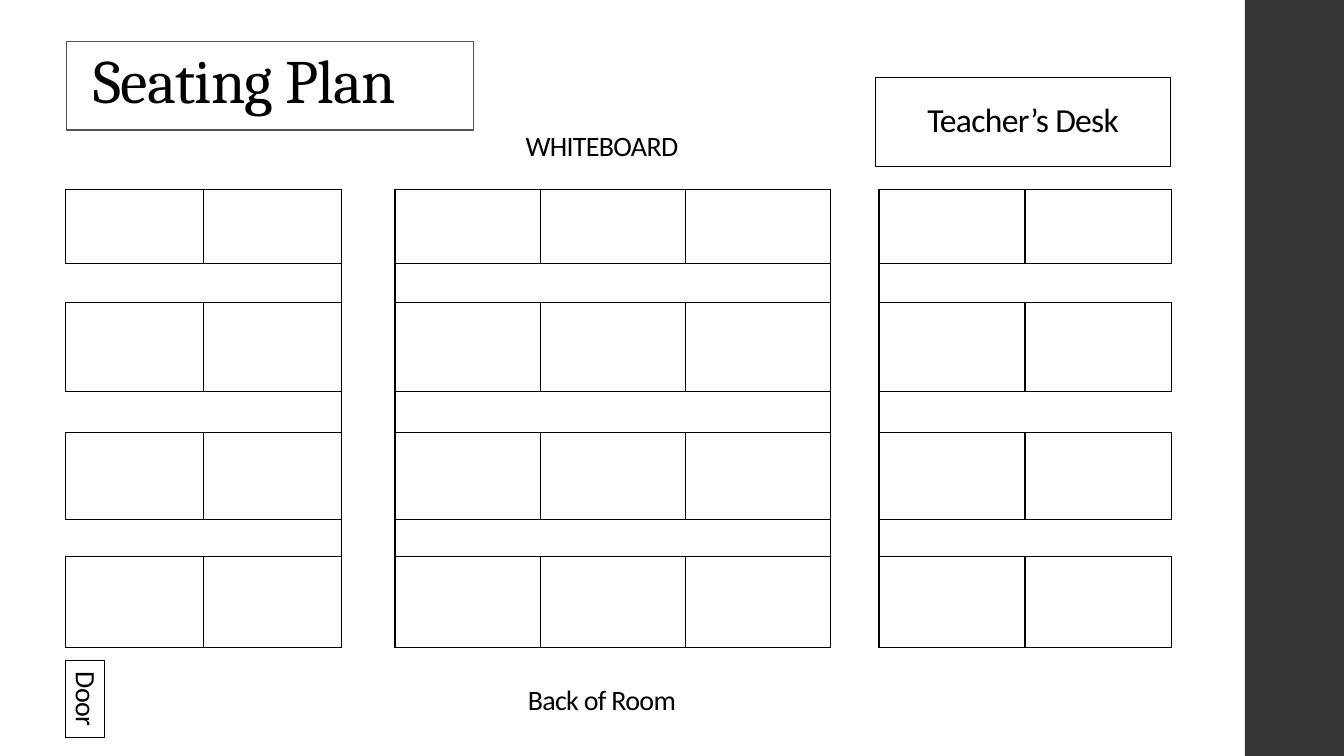
"""Build a classroom seating plan slide."""
from lxml.etree import SubElement
from pptx import Presentation
from pptx.dml.color import RGBColor
from pptx.enum.shapes import MSO_SHAPE as Shape
from pptx.enum.text import MSO_ANCHOR as Anchor, PP_ALIGN as Align
from pptx.oxml.ns import qn
from pptx.util import Pt

NO_GRID_STYLE = "{2D5ABB26-0587-4C30-8999-92F81FD0307C}"


def color(hex_code):
    return RGBColor.from_string(hex_code)


class SeatingSlide:
    ink = "000000"
    body_font = "Calibri"
    title_font = "Cambria"
    tracking = "-50"

    def __init__(self, deck):
        self.slide = deck.slides.add_slide(deck.slide_layouts[6])

    def box(self, area, fill=None, line=None, weight=0.75, rotation=0):
        panel = self.slide.shapes.add_shape(Shape.RECTANGLE, *map(Pt, area))
        panel.shadow.inherit = False
        panel.rotation = rotation
        if fill:
            panel.fill.solid()
            panel.fill.fore_color.rgb = color(fill)
        else:
            panel.fill.background()
        if line:
            panel.line.color.rgb = color(line)
            panel.line.width = Pt(weight)
        else:
            panel.line.fill.background()
        return panel

    def add_words(self, holder, words, size=20, font=None, align=Align.CENTER,
                  anchor=Anchor.BOTTOM, spacing=0.9):
        frame = holder.text_frame
        frame.word_wrap = True
        frame.vertical_anchor = anchor
        paragraph = frame.paragraphs[0]
        paragraph.alignment = align
        paragraph.line_spacing = spacing
        run = paragraph.add_run()
        run.text = words
        run.font.size = Pt(size)
        run.font.name = font or self.body_font
        run.font.color.rgb = color(self.ink)
        run.font._element.set("spc", self.tracking)

    def label(self, area, words, **style):
        holder = self.slide.shapes.add_textbox(*map(Pt, area))
        self.add_words(holder, words, **style)

    def border(self, cell, sides):
        properties = cell._tc.get_or_add_tcPr()
        for side in sides:
            edge = SubElement(properties, qn(f"a:ln{side}"), w=str(Pt(1)))
            paint = SubElement(edge, qn("a:solidFill"))
            SubElement(paint, qn("a:srgbClr"), val=self.ink)

    def seats(self, left, top, widths, heights, blocks, aisles):
        area = map(Pt, (left, top, sum(widths), sum(heights)))
        frame = self.slide.shapes.add_table(len(heights), len(widths), *area)
        plan = frame.table
        plan.first_row = plan.horz_banding = False
        plan._tbl.tblPr.find(qn("a:tableStyleId")).text = NO_GRID_STYLE
        for column, width in zip(plan.columns, widths):
            column.width = Pt(width)
        for row, height in zip(plan.rows, heights):
            row.height = Pt(height)
        for row in range(len(heights)):
            for column in range(len(widths)):
                cell = plan.cell(row, column)
                if column in aisles:
                    self.border(cell, "L")
                else:
                    self.border(cell, "TB" if row % 2 else "LRTB")
                cell.fill.background()
                cell.margin_top = cell.margin_bottom = 0
        for aisle in aisles:
            plan.cell(0, aisle).merge(plan.cell(len(heights) - 1, aisle))
        for gap in range(1, len(heights), 2):
            for first, last in blocks:
                plan.cell(gap, first).merge(plan.cell(gap, last))


def main():
    deck = Presentation()
    deck.slide_width, deck.slide_height = Pt(960), Pt(540)
    room = SeatingSlide(deck)

    room.box((889.2, 0, 70.8, 540), fill="353537")
    room.label((59.8, 23.8, 290.9, 63.4), "Seating Plan", size=44,
               font=room.title_font, align=Align.LEFT)
    room.seats(
        46.8, 135.4,
        widths=[98.6] * 2 + [38.2] + [103.7] * 3 + [34.6] + [104.4] * 2,
        heights=[52.6, 28.1, 63.4, 29.5, 61.9, 26.6, 64.8],
        blocks=[(0, 1), (3, 5), (7, 8)], aisles=(2, 6))
    room.label((261.4, 84.2, 337, 35.3), "WHITEBOARD")
    room.label((261.4, 460.1, 337, 55.4), "Back of Room")
    room.box((47.5, 29.5, 290.9, 63.4), line="525256", weight=1.1)
    door = room.box((33.1, 485.3, 55.4, 28.1), line=room.ink, rotation=90)
    room.add_words(door, "Door", spacing=0.8)
    desk = room.box((625.7, 55.4, 210.2, 63.4), line=room.ink)
    room.add_words(desk, "Teacher’s Desk", size=24, anchor=Anchor.MIDDLE)

    deck.save("out.pptx")


if __name__ == "__main__":
    main()
